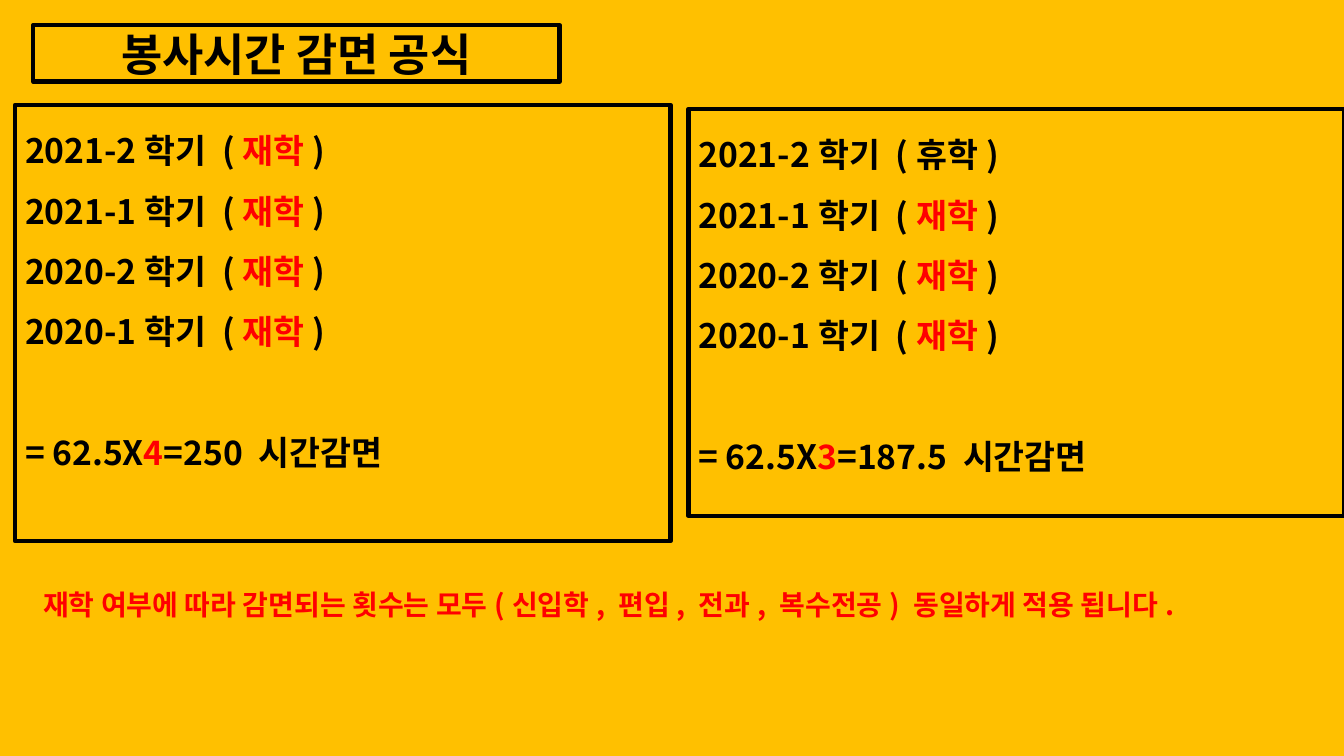
from lxml import etree
from pptx import Presentation
from pptx.dml.color import RGBColor
from pptx.enum.shapes import MSO_SHAPE
from pptx.enum.text import MSO_ANCHOR, PP_ALIGN
from pptx.oxml.ns import qn
from pptx.util import Inches, Pt

RECT = MSO_SHAPE.RECTANGLE
TOP, MIDDLE = MSO_ANCHOR.TOP, MSO_ANCHOR.MIDDLE
LEFT, CENTER = PP_ALIGN.LEFT, PP_ALIGN.CENTER

AMBER = RGBColor(0xFF, 0xC0, 0x00)
BLACK = RGBColor(0x00, 0x00, 0x00)
RED = RGBColor(0xFF, 0x00, 0x00)
FONT = "Noto Sans CJK KR"

SLIDE_W, SLIDE_H = 13.33, 7.5
PANEL_W = 6.5
TERMS = ["2021-2", "2021-1", "2020-2", "2020-1"]
ENROLLED, ON_LEAVE = "재학", "휴학"
HOURS_PER_TERM = 62.5


def add_rect(slide, box, fill=None, line=None):
    sp = slide.shapes.add_shape(RECT, *map(Inches, box))
    sp.shadow.inherit = False
    if fill is None:
        sp.fill.background()
    else:
        sp.fill.solid()
        sp.fill.fore_color.rgb = fill
    if line is None:
        sp.line.fill.background()
    else:
        sp.line.color.rgb = line
        sp.line.width = Pt(3)
    return sp


def write(sp, lines, size, align=LEFT, anchor=TOP, spacing=None):
    """Write lines, each a list of (text, colour) runs, and return the last paragraph."""
    tf = sp.text_frame
    tf.word_wrap = True
    tf.vertical_anchor = anchor
    for i, runs in enumerate(lines):
        p = tf.add_paragraph() if i else tf.paragraphs[0]
        p.alignment = align
        if spacing:
            p.line_spacing = spacing
        for text, color in runs:
            r = p.add_run()
            r.text = text
            r.font.name = FONT
            r.font.size = Pt(size)
            r.font.bold = True
            r.font.color.rgb = color
            # East Asian typeface
            ea = etree.Element(qn("a:ea"), typeface=FONT)
            r.font._element.find(qn("a:latin")).addnext(ea)
    return p


def add_title(slide, box, text):
    sp = add_rect(slide, box, line=BLACK)
    write(sp, [[(text, BLACK)]], 32, align=CENTER, anchor=MIDDLE)


def add_panel(slide, box, statuses):
    """Framed list of terms with the resulting hour reduction."""
    lines = [
        [(f"{term}학기 (", BLACK),
         (status, RED if status == ENROLLED else BLACK),
         (")", BLACK)]
        for term, status in zip(TERMS, statuses)
    ]
    count = statuses.count(ENROLLED)
    lines.append([
        (f"= {HOURS_PER_TERM}X", BLACK),
        (str(count), RED),
        (f"={HOURS_PER_TERM * count:g} 시간감면", BLACK),
    ])
    sp = add_rect(slide, box, line=BLACK)
    formula = write(sp, lines, 24, spacing=1.5)
    formula.space_before = Pt(43)


def add_note(slide, box, text):
    sp = slide.shapes.add_textbox(*map(Inches, box))
    write(sp, [[(text, RED)]], 20)


def main():
    prs = Presentation()
    prs.slide_width, prs.slide_height = Inches(SLIDE_W), Inches(SLIDE_H)
    slide = prs.slides.add_slide(prs.slide_layouts[6])

    # Backdrop and title
    add_rect(slide, (0, 0, SLIDE_W, SLIDE_H), fill=AMBER)
    add_title(slide, (0.33, 0.25, 5.22, 0.56), "봉사시간 감면 공식")

    # Two worked examples
    add_panel(slide, (0.15, 1.04, PANEL_W, 4.33), [ENROLLED] * 4)
    add_panel(slide, (SLIDE_W - PANEL_W, 1.08, PANEL_W, 4.04),
              [ON_LEAVE] + [ENROLLED] * 3)

    # Closing note
    add_note(slide, (0.33, 5.78, 12.34, 0.44),
             "재학 여부에 따라 감면되는 횟수는 모두(신입학, 편입, 전과, 복수전공) "
             "동일하게 적용 됩니다.")

    prs.save("out.pptx")


if __name__ == "__main__":
    main()
